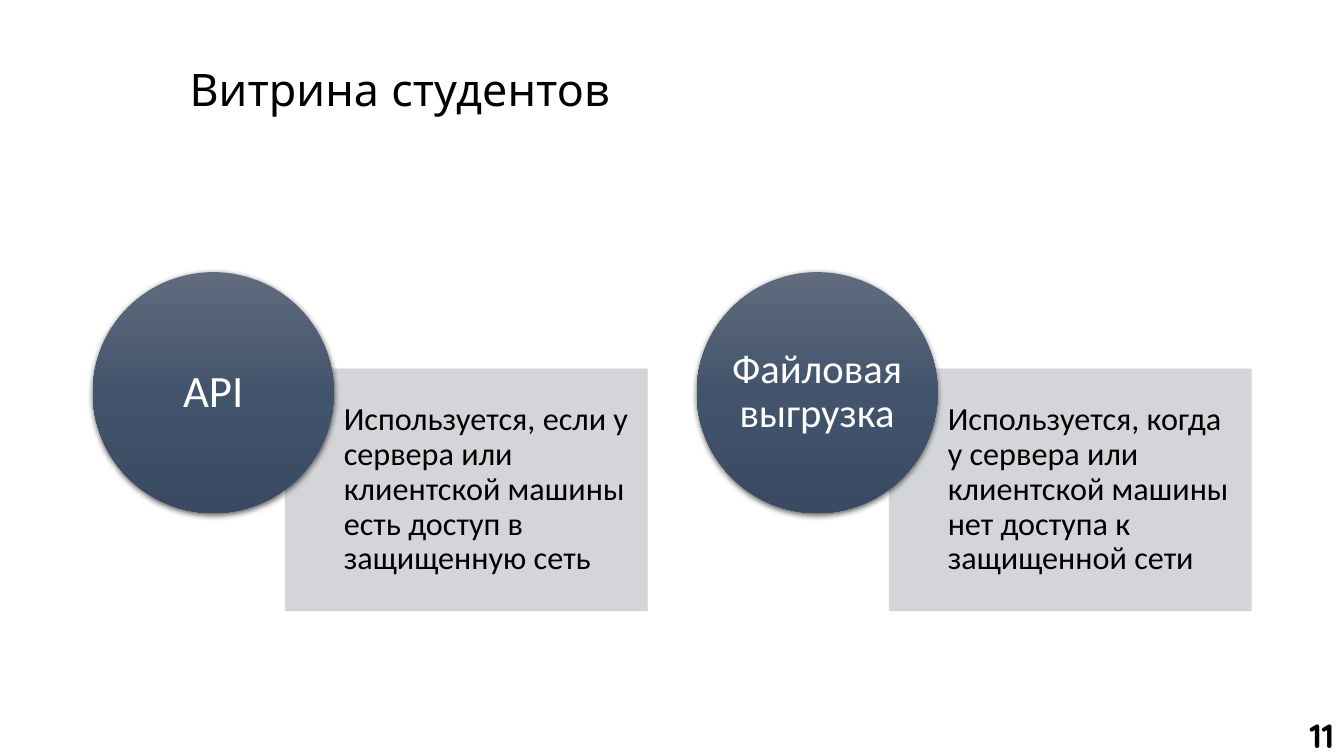
"""Build the student showcase slide with two access options."""
from pptx import Presentation
from pptx.dml.color import RGBColor
from pptx.enum.shapes import MSO_SHAPE
from pptx.enum.text import MSO_ANCHOR, PP_ALIGN
from pptx.oxml import parse_xml
from pptx.oxml.ns import nsdecls, qn
from pptx.util import Inches, Pt

RECTANGLE, OVAL = MSO_SHAPE.RECTANGLE, MSO_SHAPE.OVAL
LEFT, CENTER, RIGHT = PP_ALIGN.LEFT, PP_ALIGN.CENTER, PP_ALIGN.RIGHT
MIDDLE, TOP = MSO_ANCHOR.MIDDLE, MSO_ANCHOR.TOP

TITLE = "Витрина студентов"
PAGE_NUMBER = "11"
OPTIONS = [
    ("API", 32, "Используется, если у сервера или клиентской машины есть доступ в защищенную сеть"),
    ("Файловая выгрузка", 29, "Используется, когда у сервера или клиентской машины нет доступа к защищенной сети"),
]
COLORS = {"text": "000000", "label": "FFFFFF", "panel": "CFD1D4"}
GRADIENT = [(0, "606B7D"), (50, "42546C"), (100, "394A62")]

SLIDE_WIDTH, SLIDE_HEIGHT = 13.33, 7.5
FIRST_LEFT, COLUMN_STEP = 0.92, 5.99
CIRCLE_TOP, CIRCLE_SIZE = 2.7, 2.39
PANEL_SHIFT, PANEL_TOP, PANEL_WIDTH, PANEL_HEIGHT = 1.91, 3.66, 3.59, 2.4
PANEL_INSETS = (0.58, 0.18, 0.18, 0.18)


def write(shape, text, size, color, font="Calibri", align=LEFT, anchor=MIDDLE,
          insets=(0, 0, 0, 0), spacing=0.9, bold=False):
    frame = shape.text_frame
    margins = dict(zip(("margin_left", "margin_top", "margin_right", "margin_bottom"), map(Inches, insets)))
    para = frame.paragraphs[0]
    span = para.add_run()
    span.text = text
    formats = [
        (frame, {"word_wrap": True, "vertical_anchor": anchor, **margins}),
        (para, {"alignment": align, "line_spacing": spacing}),
        (span.font, {"name": font, "size": Pt(size), "bold": bold}),
    ]
    for target, values in formats:
        for name, value in values.items():
            setattr(target, name, value)
    span.font.color.rgb = RGBColor.from_string(COLORS[color])


def add_panel(page, left, text):
    panel = page.shapes.add_shape(RECTANGLE, *map(Inches, (left, PANEL_TOP, PANEL_WIDTH, PANEL_HEIGHT)))
    panel.shadow.inherit = False
    panel.fill.solid()
    panel.line.width = Pt(0.5)
    for fill in (panel.fill, panel.line.fill):
        fill.solid()
        fill.fore_color.rgb = RGBColor.from_string(COLORS["panel"])
    for color in panel.element.spPr.iter(qn("a:srgbClr")):
        color.append(parse_xml(f'<a:alpha {nsdecls("a")} val="90000"/>'))
    write(panel, text, 23, "text", insets=PANEL_INSETS)


def add_circle(page, left, label, size):
    circle = page.shapes.add_shape(OVAL, *map(Inches, (left, CIRCLE_TOP, CIRCLE_SIZE, CIRCLE_SIZE)))
    circle.line.fill.background()
    circle.shadow.inherit = False
    stops = "".join(f'<a:gs pos="{share * 1000}"><a:srgbClr val="{color}"/></a:gs>' for share, color in GRADIENT)
    properties = circle.element.spPr
    properties.find(qn("a:prstGeom")).addnext(parse_xml(
        f'<a:gradFill {nsdecls("a")} rotWithShape="1"><a:gsLst>{stops}</a:gsLst>'
        '<a:lin ang="5400000" scaled="0"/></a:gradFill>'))
    properties.find(qn("a:effectLst")).append(parse_xml(
        f'<a:outerShdw {nsdecls("a")} blurRad="{Pt(4.5)}" dist="{Pt(1.5)}" dir="5400000" algn="ctr" rotWithShape="0">'
        '<a:srgbClr val="000000"><a:alpha val="63000"/></a:srgbClr></a:outerShdw>'))
    write(circle, label, size, "label", align=CENTER)


def main():
    deck = Presentation()
    deck.slide_width, deck.slide_height = Inches(SLIDE_WIDTH), Inches(SLIDE_HEIGHT)
    page = deck.slides.add_slide(deck.slide_layouts[5])

    title = page.shapes.title
    title.left, title.top, title.width, title.height = map(Inches, (1.78, 0.19, 10.63, 1.45))
    write(title, TITLE, 32, "text", font="Quicksand", insets=(0.1, 0.05, 0.1, 0.05))

    for column, (label, size, text) in enumerate(OPTIONS):
        left = FIRST_LEFT + column * COLUMN_STEP
        add_panel(page, left + PANEL_SHIFT, text)
        add_circle(page, left, label, size)

    number = page.shapes.add_textbox(*map(Inches, (12.28, 7.04, 1.05, 0.51)))
    write(number, PAGE_NUMBER, 24, "text", font="Quicksand", align=RIGHT, anchor=TOP,
          insets=(0.1, 0.05, 0.1, 0.05), spacing=1.0, bold=True)
    deck.save("out.pptx")


if __name__ == "__main__":
    main()
